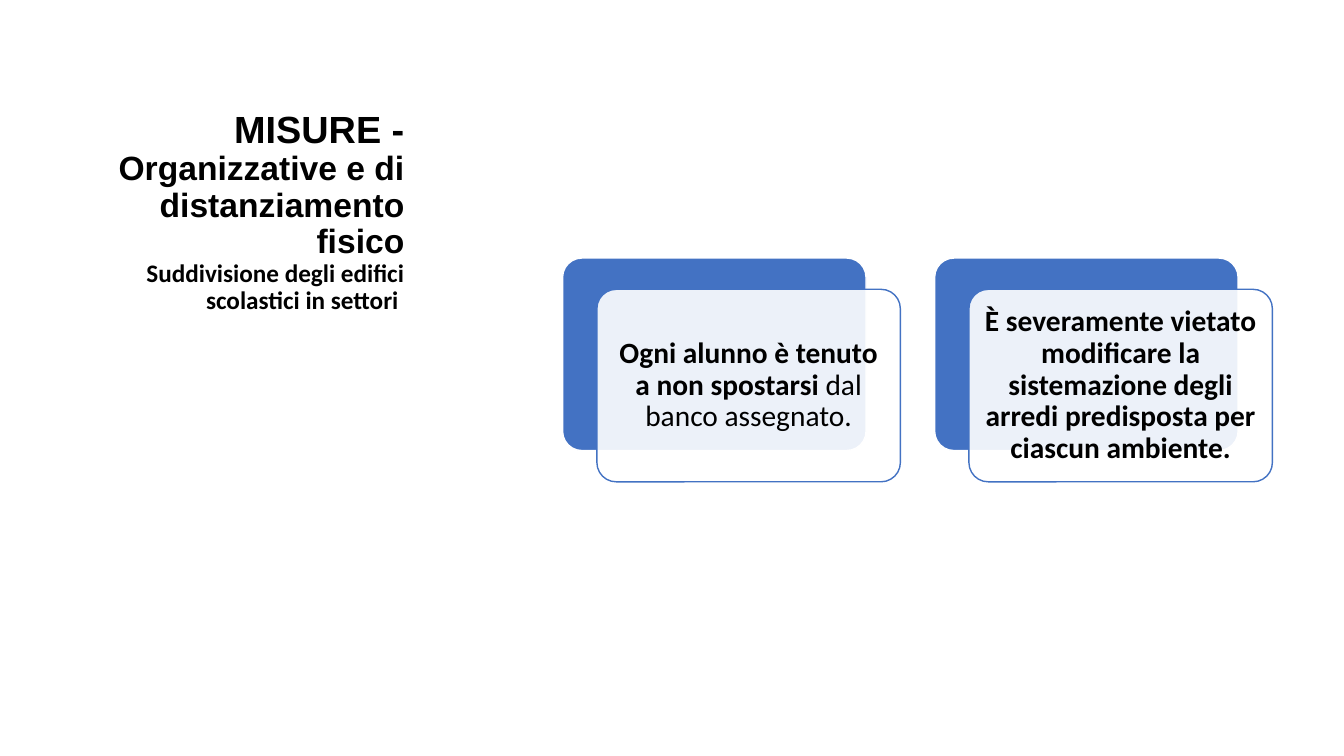
from lxml import etree
from pptx import Presentation
from pptx import util as u
from pptx.dml.color import RGBColor
from pptx.enum import shapes, text
from pptx.oxml.ns import qn

HUES = {"blue": "4372C3", "white": "FFFFFF", "black": "000000"}
CARDS = [
    [("Ogni alunno è tenuto a non spostarsi ", True), ("dal banco assegnato.", False)],
    [("È severamente vietato modificare la sistemazione degli arredi "
      "predisposta per ciascun ambiente.", True)],
]
LEFT, TOP, WIDE, HIGH = 5.58, 2.56, 3.01, 1.91
STEP, SHIFT_X, SHIFT_Y = 3.69, 0.34, 0.31


class Deck:
    """Holds the colours and the current slide, and draws its elements."""

    def __init__(self, hues):
        self.hues = {name: RGBColor.from_string(code) for name, code in hues.items()}
        self.file = Presentation()
        self.file.slide_width = u.Inches(13.33)
        self.file.slide_height = u.Inches(7.5)
        self.slide = self.file.slides.add_slide(self.file.slide_layouts[5])

    def frame(self, shape, anchor, pad_x, pad_y, align):
        frame = shape.text_frame
        frame.word_wrap = True
        frame.auto_size = text.MSO_AUTO_SIZE.NONE
        frame.vertical_anchor = anchor
        frame.margin_left = frame.margin_right = u.Inches(pad_x)
        frame.margin_top = frame.margin_bottom = u.Inches(pad_y)
        para = frame.paragraphs[0]
        para.alignment = align
        para.line_spacing = 0.9
        return para

    def run(self, para, words, size, bold=True, face="Calibri"):
        run = para.add_run()
        run.text = words
        run.font.size = u.Pt(size)
        run.font.bold = bold
        run.font.name = face
        run.font.color.rgb = self.hues["black"]

    def title(self, x, y, w, h):
        shape = self.slide.shapes.title
        shape.left, shape.top = u.Inches(x), u.Inches(y)
        shape.width, shape.height = u.Inches(w), u.Inches(h)
        para = self.frame(shape, text.MSO_ANCHOR.TOP, 0.1, 0.05, text.PP_ALIGN.RIGHT)
        self.run(para, "MISURE - ", 27, face="Arial")
        self.run(para, "Organizzative e di distanziamento fisico", 24, face="Arial")
        para.add_line_break()
        self.run(para, "Suddivisione degli edifici scolastici in settori ", 18)

    def panel(self, x, y, fill, line, alpha=100):
        shape = self.slide.shapes.add_shape(
            shapes.MSO_SHAPE.ROUNDED_RECTANGLE,
            u.Inches(x), u.Inches(y), u.Inches(WIDE), u.Inches(HIGH))
        shape.adjustments[0] = 0.1
        shape.shadow.inherit = False
        shape.fill.solid()
        shape.fill.fore_color.rgb = self.hues[fill]
        shape.line.color.rgb = self.hues[line]
        shape.line.width = u.Pt(1)
        if alpha < 100:
            tint = shape.fill._xPr.find(qn("a:solidFill"))[0]
            etree.SubElement(tint, qn("a:alpha")).set("val", str(alpha * 1000))
        return shape

    def card(self, x, y, parts):
        self.panel(x, y, "blue", "white")
        front = self.panel(x + SHIFT_X, y + SHIFT_Y, "white", "blue", 90)
        para = self.frame(front, text.MSO_ANCHOR.MIDDLE, 0.09, 0.09, text.PP_ALIGN.CENTER)
        for words, bold in parts:
            self.run(para, words, 21, bold)


def main():
    deck = Deck(HUES)
    deck.title(0.72, 1.05, 3.39, 4.84)
    for i, parts in enumerate(CARDS):
        deck.card(LEFT + i * STEP, TOP, parts)
    deck.file.save("out.pptx")


if __name__ == "__main__":
    main()
